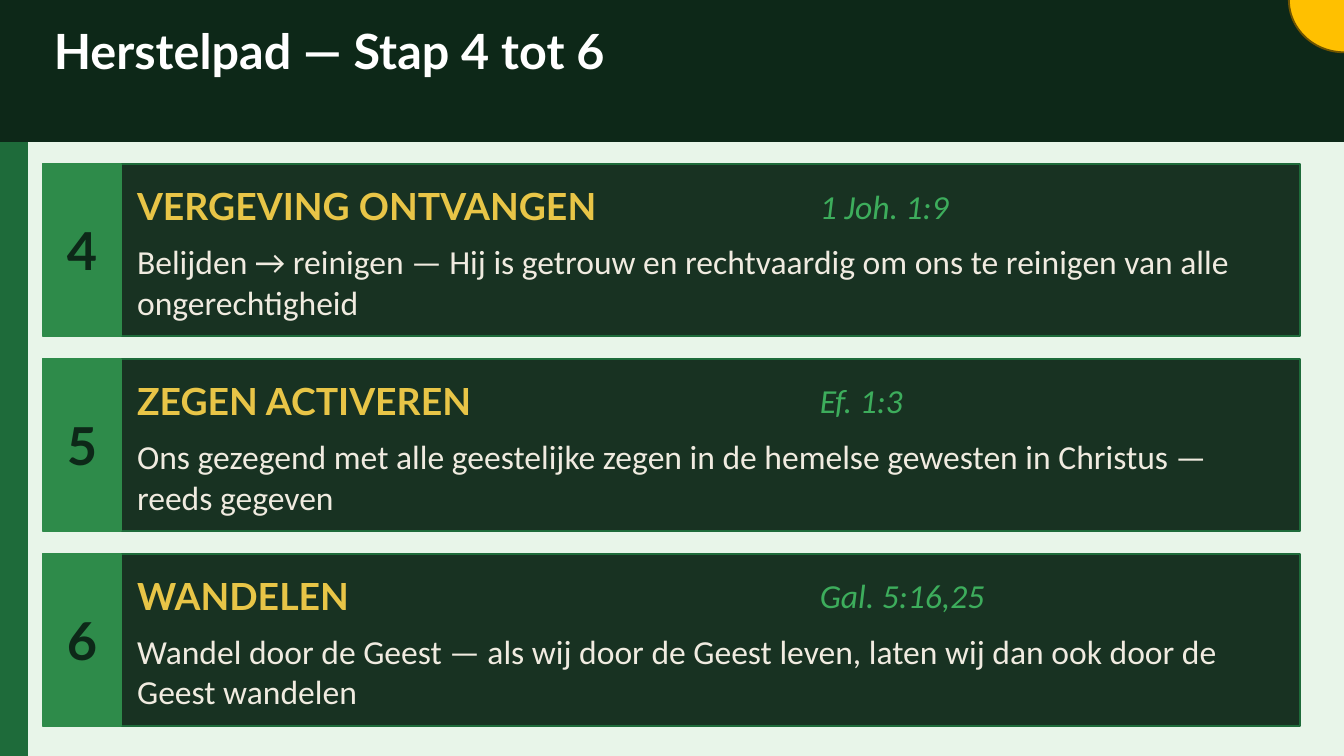
from lxml import etree
from pptx import Presentation
from pptx.dml.color import RGBColor
from pptx.enum import shapes, text
from pptx.oxml.ns import qn
from pptx.util import Inches, Pt

# Content
TITLE = "Herstelpad — Stap 4 tot 6"
STEPS = [
    ("4", "VERGEVING ONTVANGEN", "1 Joh. 1:9",
     "Belijden → reinigen — Hij is getrouw en rechtvaardig om ons te reinigen "
     "van alle ongerechtigheid"),
    ("5", "ZEGEN ACTIVEREN", "Ef. 1:3",
     "Ons gezegend met alle geestelijke zegen in de hemelse gewesten in "
     "Christus — reeds gegeven"),
    ("6", "WANDELEN", "Gal. 5:16,25",
     "Wandel door de Geest — als wij door de Geest leven, laten wij dan ook "
     "door de Geest wandelen"),
]

# Formats
DARK, FOREST, GREEN = "0D2818", "1E6B3A", "2E8B4A"
FORMATS = {
    "title": dict(name="Lato", size=Pt(26), bold=True, color="FFFFFF"),
    "number": dict(name="Lato", size=Pt(28), bold=True, color=DARK),
    "heading": dict(name="Lato", size=Pt(20), bold=True, color="E8C547"),
    "verse": dict(name="Calibri", size=Pt(18), italic=True, color="3DAD5C"),
    "body": dict(name="Calibri", size=Pt(18), color="F0EBE0"),
}

# Layout in inches, on a 16:9 slide
WIDTH = 10
HEIGHT = WIDTH * 9 / 16
CARD_LEFT, CARD_TOP, CARD_WIDTH, CARD_HEIGHT = 0.32, 1.22, 9.35, 1.28
CARD_PITCH = CARD_HEIGHT + 0.17
BADGE_WIDTH = 0.58
TEXT_LEFT, VERSE_LEFT = 1.02, 6.1


def paint(color_format, color):
    color_format.rgb = RGBColor.from_string(color)


def write(shape, words, style, align=text.PP_ALIGN.LEFT):
    frame = shape.text_frame
    frame.text = words
    settings = dict(word_wrap=True, auto_size=text.MSO_AUTO_SIZE.NONE,
                    vertical_anchor=text.MSO_ANCHOR.MIDDLE, margin_left=0,
                    margin_top=0, margin_right=0, margin_bottom=0)
    for key, value in settings.items():
        setattr(frame, key, value)
    paragraph = frame.paragraphs[0]
    paragraph.alignment = align
    font = paragraph.runs[0].font
    for key, value in FORMATS[style].items():
        if key == "color":
            paint(font.color, value)
        else:
            setattr(font, key, value)


def add_block(slide, box, fill, line=None, kind=shapes.MSO_SHAPE.RECTANGLE,
              opacity=None):
    block = slide.shapes.add_shape(kind, *map(Inches, box))
    block.shadow.inherit = False
    block.fill.solid()
    paint(block.fill.fore_color, fill)
    paint(block.line.color, line or fill)
    block.line.width = Pt(1)
    if opacity:
        color = block.fill._xPr.find(qn("a:solidFill"))[0]
        etree.SubElement(color, qn("a:alpha"), val=str(opacity * 1000))
    return block


def add_label(slide, box, words, style, align=text.PP_ALIGN.LEFT):
    write(slide.shapes.add_textbox(*map(Inches, box)), words, style, align)


def add_step(slide, top, number, heading, verse, body):
    badge = (CARD_LEFT, top, BADGE_WIDTH, CARD_HEIGHT)
    add_block(slide, (CARD_LEFT, top, CARD_WIDTH, CARD_HEIGHT), DARK, FOREST,
              opacity=95)
    add_block(slide, badge, GREEN)
    add_label(slide, badge, number, "number", text.PP_ALIGN.CENTER)
    add_label(slide, (TEXT_LEFT, top + 0.1, 5, 0.42), heading, "heading")
    add_label(slide, (VERSE_LEFT, top + 0.1, 2.8, 0.42), verse, "verse")
    add_label(slide, (TEXT_LEFT, top + 0.55, 8.35, 0.65), body, "body")


def main():
    deck = Presentation()
    deck.slide_width, deck.slide_height = Inches(WIDTH), Inches(HEIGHT)
    slide = deck.slides.add_slide(deck.slide_layouts[5])
    slide.background.fill.solid()
    paint(slide.background.fill.fore_color, "E8F5E9")

    # Side bar and header
    add_block(slide, (0, 0, 0.2, HEIGHT), FOREST)
    header = add_block(slide, (0, 0, WIDTH, 1.05), DARK)

    # Title, brought in front of the header
    title = slide.shapes.title
    title.left, title.top, title.width, title.height = map(
        Inches, (0.4, 0.08, 9.2, 0.58))
    write(title, TITLE, "title")
    header._element.addnext(title._element)

    # Step cards
    for index, step in enumerate(STEPS):
        add_step(slide, CARD_TOP + index * CARD_PITCH, *step)

    # Corner sun
    add_block(slide, (9.59, -0.39, 0.83, 0.78), "FFC000", "705400",
              shapes.MSO_SHAPE.OVAL)

    deck.save("out.pptx")


if __name__ == "__main__":
    main()
